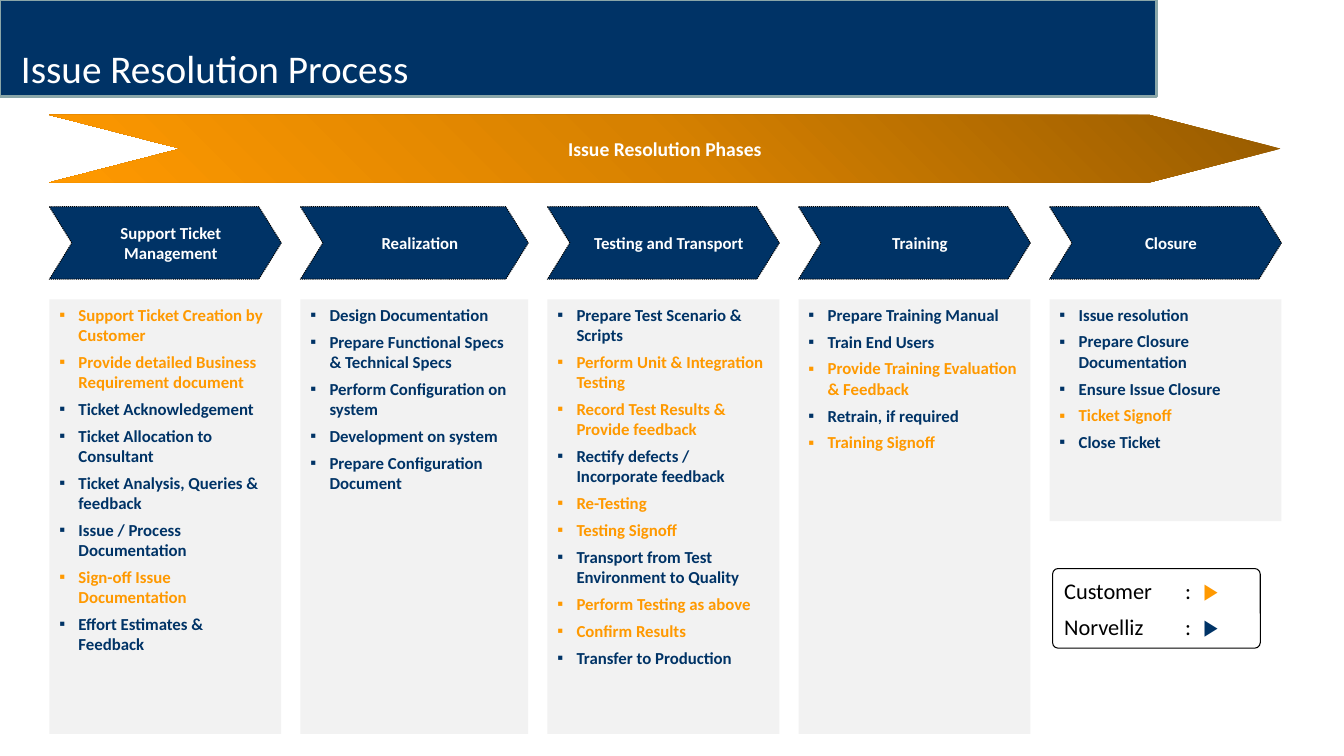
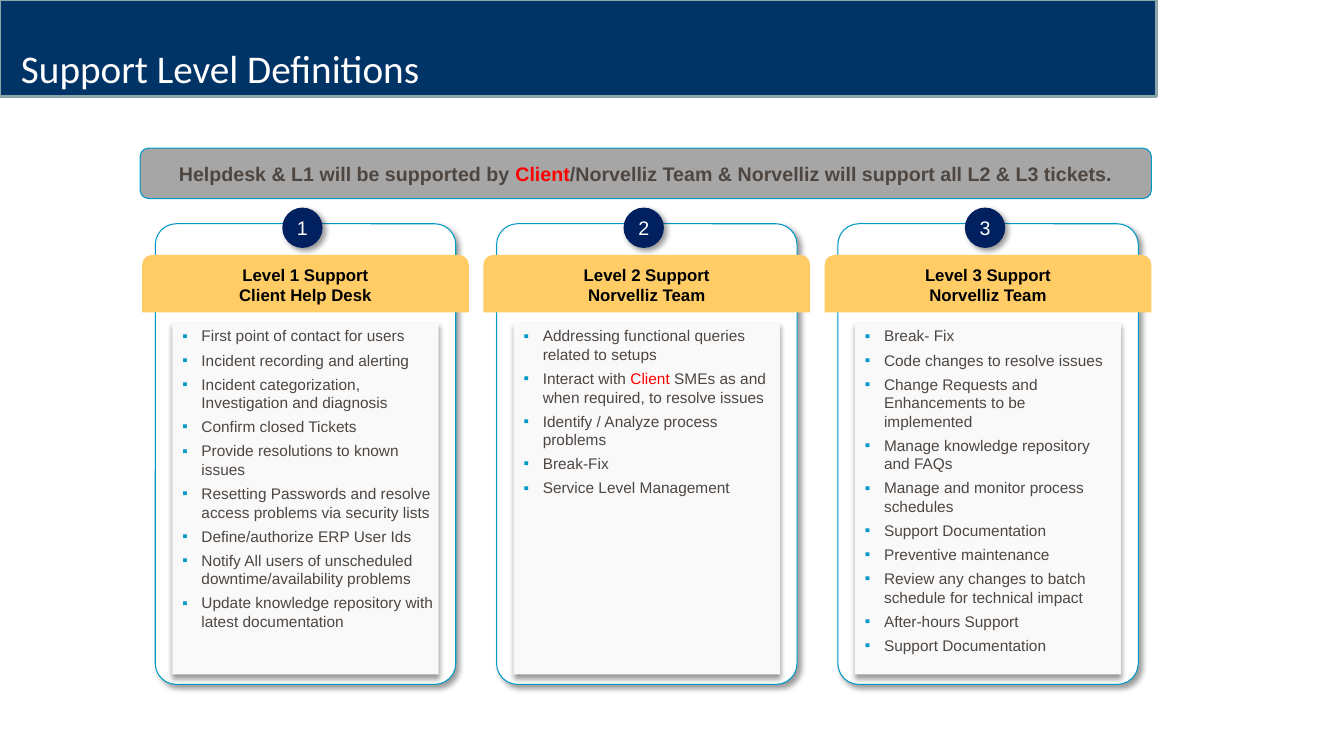
import pptx
import pptx.dml.color
import pptx.enum.dml
import pptx.enum.shapes
import pptx.enum.text
import pptx.oxml
import pptx.oxml.ns
import pptx.util

SHAPE = pptx.enum.shapes.MSO_SHAPE
ANCHOR = pptx.enum.text.MSO_ANCHOR
ALIGN = pptx.enum.text.PP_ALIGN
INCH = pptx.util.Inches

COLOURS = {
    "navy": "003366", "band edge": "8AA6A8", "white": "FFFFFF", "black": "000000",
    "orange": "FF9900", "mid orange": "D78100", "brown": "975B00",
    "panel": "F2F2F2", "body": "F9F9F9", "banner": "A6A6A6", "header": "FFCC66",
    "cyan": "0098C7", "badge": "002060", "text": "4E4641", "red": "FF0000",
}
CUSTOMER, PROVIDER = "orange", "navy"

# Slide 1 grid: columns set side by side with one gap, rows by top and height
PHASE_LEFT, PHASE_GAP = 0.49, 0.19
PHASE_ROW, TASK_ROW = (2.05, 0.72), 2.97
PHASES = [  # name, column width, task panel height, tasks by owner
    ("Support Ticket Management", 2.3, 4.31, [
        ("Support Ticket Creation by Customer", CUSTOMER),
        ("Provide detailed Business Requirement document", CUSTOMER),
        ("Ticket Acknowledgement", PROVIDER),
        ("Ticket Allocation to Consultant", PROVIDER),
        ("Ticket Analysis, Queries & feedback", PROVIDER),
        ("Issue / Process Documentation", PROVIDER),
        ("Sign-off Issue Documentation", CUSTOMER),
        ("Effort Estimates & Feedback", PROVIDER)]),
    ("Realization", 2.26, 4.31, [
        ("Design Documentation", PROVIDER),
        ("Prepare Functional Specs & Technical Specs", PROVIDER),
        ("Perform Configuration on system", PROVIDER),
        ("Development on system", PROVIDER),
        ("Prepare Configuration Document", PROVIDER)]),
    ("Testing and Transport", 2.3, 4.31, [
        ("Prepare Test Scenario & Scripts", PROVIDER),
        ("Perform Unit & Integration Testing", CUSTOMER),
        ("Record Test Results & Provide feedback", CUSTOMER),
        ("Rectify defects / Incorporate feedback", PROVIDER),
        ("Re-Testing", CUSTOMER),
        ("Testing Signoff", CUSTOMER),
        ("Transport from Test Environment to Quality", PROVIDER),
        ("Perform Testing as above", CUSTOMER),
        ("Confirm Results", CUSTOMER),
        ("Transfer to Production", PROVIDER)]),
    ("Training", 2.3, 4.31, [
        ("Prepare Training Manual", PROVIDER),
        ("Train End Users", PROVIDER),
        ("Provide Training Evaluation & Feedback", CUSTOMER),
        ("Retrain, if required", PROVIDER),
        ("Training Signoff", CUSTOMER)]),
    ("Closure", 2.3, 2.2, [
        ("Issue resolution", PROVIDER),
        ("Prepare Closure Documentation", PROVIDER),
        ("Ensure Issue Closure", PROVIDER),
        ("Ticket Signoff", CUSTOMER),
        ("Close Ticket", PROVIDER)]),
]

# Slide 2 grid: equal columns spread over a given span
LEVEL_LEFT, LEVEL_SPAN, LEVEL_WIDTH = 1.41, 10.01, 3.24
LEVELS = [  # header lines, duties (a list holds coloured runs)
    (["Level 1 Support", "Client Help Desk"], [
        "First point of contact for users",
        "Incident recording and alerting",
        "Incident categorization, Investigation and diagnosis",
        "Confirm closed Tickets",
        "Provide resolutions to known issues",
        "Resetting Passwords and resolve access problems via security lists",
        "Define/authorize ERP User Ids",
        "Notify All users of unscheduled downtime/availability problems",
        "Update knowledge repository with latest documentation"]),
    (["Level 2 Support", "Norvelliz Team"], [
        "Addressing functional queries related to setups",
        [("Interact with ", "text"), ("Client", "red"),
         (" SMEs as and when required, to resolve issues", "text")],
        "Identify / Analyze process problems",
        "Break-Fix",
        "Service Level Management"]),
    (["Level 3 Support", "Norvelliz Team"], [
        "Break- Fix",
        "Code changes to resolve issues",
        "Change Requests and Enhancements to be implemented",
        "Manage knowledge repository and FAQs",
        "Manage and monitor process schedules",
        "Support Documentation",
        "Preventive maintenance",
        "Review any changes to batch schedule for technical impact",
        "After-hours Support",
        "Support Documentation"]),
]


def rgb(name):
    return pptx.dml.color.RGBColor.from_string(COLOURS[name])


def add_xml(parent, markup):
    """Append DrawingML markup to an element."""
    opening, rest = markup.split(">", 1) if "/>" not in markup.split(">", 1)[0] + ">" else (markup[:-2], None)
    declared = f"{opening} {pptx.oxml.ns.nsdecls('a')}"
    parent.append(pptx.oxml.parse_xml(declared + ("/>" if rest is None else ">" + rest)))


def add_block(slide, kind, box, fill, line=None, width=0.75, corner=None):
    """Add a preset shape with a flat fill, an optional line and no shadow."""
    block = slide.shapes.add_shape(kind, *map(INCH, box))
    block.shadow.inherit = False
    block.fill.solid()
    block.fill.fore_color.rgb = rgb(fill)
    if line:
        block.line.color.rgb = rgb(line)
        block.line.width = pptx.util.Pt(width)
    else:
        block.line.fill.background()
    if corner is not None:
        block.adjustments[0] = corner
    return block


def cast_shadow(block, degrees):
    effects = block.element.spPr.find(pptx.oxml.ns.qn("a:effectLst"))
    add_xml(effects, f'<a:outerShdw blurRad="50800" dist="38100" dir="{degrees * 60000}" '
                     'algn="t" rotWithShape="0"><a:srgbClr val="000000">'
                     '<a:alpha val="40000"/></a:srgbClr></a:outerShdw>')


def shade_phases(arrow):
    """Give the arrow a three-stop diagonal gradient."""
    arrow.fill.gradient()
    gradient = arrow.element.spPr.find(pptx.oxml.ns.qn("a:gradFill"))
    for part in list(gradient):
        gradient.remove(part)
    stops = "".join(f'<a:gs pos="{place}"><a:srgbClr val="{COLOURS[name]}"/></a:gs>'
                    for place, name in ((0, "brown"), (50000, "mid orange"), (100000, "orange")))
    add_xml(gradient, f"<a:gsLst>{stops}</a:gsLst>")
    add_xml(gradient, '<a:lin ang="8100000" scaled="0"/>')


def write(block, paragraphs, size, colour="black", face="Calibri", bold=False,
          align=ALIGN.LEFT, anchor=ANCHOR.MIDDLE, gap=0, indent=0,
          bullet=None, tabs=(), line_spacing=None):
    """Fill a shape; a paragraph is a string, a (text, colour) pair or a list of pairs."""
    frame = block.text_frame
    frame.word_wrap = True
    frame.vertical_anchor = anchor
    for index, content in enumerate(paragraphs):
        if isinstance(content, str):
            content = (content, colour)
        runs = content if isinstance(content, list) else [content]
        paragraph = frame.add_paragraph() if index else frame.paragraphs[0]
        paragraph.alignment = align
        paragraph.line_spacing = line_spacing
        if gap:
            paragraph.space_before = pptx.util.Pt(gap if index else 0)
            paragraph.space_after = pptx.util.Pt(gap)
        properties = paragraph._p.get_or_add_pPr()
        if indent:
            properties.set("marL", str(INCH(indent)))
        if bullet:
            properties.set("indent", str(-INCH(indent)))
            shade = COLOURS[runs[0][1] if bullet == "as text" else bullet]
            add_xml(properties, f'<a:buClr><a:srgbClr val="{shade}"/></a:buClr>')
            add_xml(properties, '<a:buFont typeface="Arial"/>')
            add_xml(properties, '<a:buChar char="▪"/>')
        if tabs:
            stops = "".join(f'<a:tab pos="{INCH(stop)}" algn="l"/>' for stop in tabs)
            add_xml(properties, f"<a:tabLst>{stops}</a:tabLst>")
        font = paragraph.font
        font.name, font.size, font.bold = face, pptx.util.Pt(size), bold
        font.color.rgb = rgb(runs[0][1])
        for text, run_colour in runs:
            run = paragraph.add_run()
            run.text = text
            if len(runs) > 1:
                run.font.color.rgb = rgb(run_colour)


def add_titled_slide(deck, title):
    """Start a slide with the title band."""
    slide = deck.slides.add_slide(deck.slide_layouts[6])
    add_block(slide, SHAPE.RECTANGLE, (0, 0, 11.47, 0.96), "navy", "band edge", 2)
    heading = slide.shapes.add_textbox(*map(INCH, (0.11, 0.08, 11.5, 0.88)))
    write(heading, [title], 28, "white", anchor=ANCHOR.BOTTOM, line_spacing=1.2)
    return slide


def add_phase(slide, left, name, width, height, tasks):
    """Add a phase chevron with its task panel below."""
    top, depth = PHASE_ROW
    phase = add_block(slide, SHAPE.CHEVRON, (left, top, width, depth), "navy", "black", corner=0.31)
    phase.line.dash_style = pptx.enum.dml.MSO_LINE.ROUND_DOT
    write(phase, [name], 12, "white", bold=True, align=ALIGN.CENTER, indent=0.11)
    panel = add_block(slide, SHAPE.RECTANGLE, (left, TASK_ROW, width, height), "panel")
    write(panel, tasks, 12, bold=True, anchor=ANCHOR.TOP, gap=2.4, indent=0.19, bullet="as text")


def add_level(slide, left, number, header_lines, duties):
    """Add a support level: card, duties, header and numbered badge."""
    def inset(margin, top, height):
        return left + margin, top, LEVEL_WIDTH - 2 * margin, height

    card = add_block(slide, SHAPE.ROUNDED_RECTANGLE, inset(0.13, 2.22, 4.57), "white", "cyan",
                     corner=0.07)
    cast_shadow(card, 45)
    body = add_block(slide, SHAPE.RECTANGLE, inset(0.3, 3.19, 3.5), "body")
    cast_shadow(body, 90)
    body.text_frame.margin_right = INCH(0.05)
    write(body, duties, 11, "text", "Arial", anchor=ANCHOR.TOP, gap=2, indent=0.19, bullet="cyan")
    header = add_block(slide, SHAPE.ROUND_2_SAME_RECTANGLE, inset(0, 2.53, 0.57), "header")
    write(header, header_lines, 12, face="Arial", bold=True, align=ALIGN.CENTER)
    badge = add_block(slide, SHAPE.OVAL, (left + 1.39, 2.06, 0.4, 0.4), "badge")
    cast_shadow(badge, 45)
    badge.text_frame.margin_left = badge.text_frame.margin_right = 0
    write(badge, [str(number)], 14, "white", "Arial", align=ALIGN.CENTER)


def build_process(deck):
    slide = add_titled_slide(deck, "Issue Resolution Process")
    arrow = add_block(slide, SHAPE.CHEVRON, (PHASE_LEFT, 1.14, 12.21, 0.67), "orange", corner=1.94)
    shade_phases(arrow)
    write(arrow, ["Issue Resolution Phases"], 14, "white", bold=True, align=ALIGN.CENTER)
    left = PHASE_LEFT
    for name, width, height, tasks in PHASES:
        add_phase(slide, left, name, width, height, tasks)
        left += width + PHASE_GAP

    # Legend of task owners
    legend = add_block(slide, SHAPE.ROUNDED_RECTANGLE, (10.44, 5.64, 2.06, 0.79), "white", "black",
                       corner=0.07)
    owners = [[(f"{owner}\t:\t", "black"), ("▶", colour)]
              for owner, colour in (("Customer", CUSTOMER), ("Norvelliz", PROVIDER))]
    write(legend, owners, 16, gap=3.2, tabs=(1.2, 1.38))


def build_levels(deck):
    slide = add_titled_slide(deck, "Support Level Definitions")
    banner = add_block(slide, SHAPE.ROUNDED_RECTANGLE, (1.39, 1.47, 10.03, 0.5), "banner", "cyan")
    write(banner, [[("Helpdesk & L1 will be supported by ", "text"), ("Client", "red"),
                    ("/Norvelliz Team & Norvelliz will support all L2 & L3 tickets.", "text")]],
          14, face="Arial", bold=True, align=ALIGN.CENTER)
    pitch = (LEVEL_SPAN - LEVEL_WIDTH) / (len(LEVELS) - 1)
    for index, (header_lines, duties) in enumerate(LEVELS):
        add_level(slide, LEVEL_LEFT + index * pitch, index + 1, header_lines, duties)


def main():
    deck = pptx.Presentation()
    deck.slide_width, deck.slide_height = INCH(13.33), INCH(7.5)
    build_process(deck)
    build_levels(deck)
    deck.save("out.pptx")


if __name__ == "__main__":
    main()
